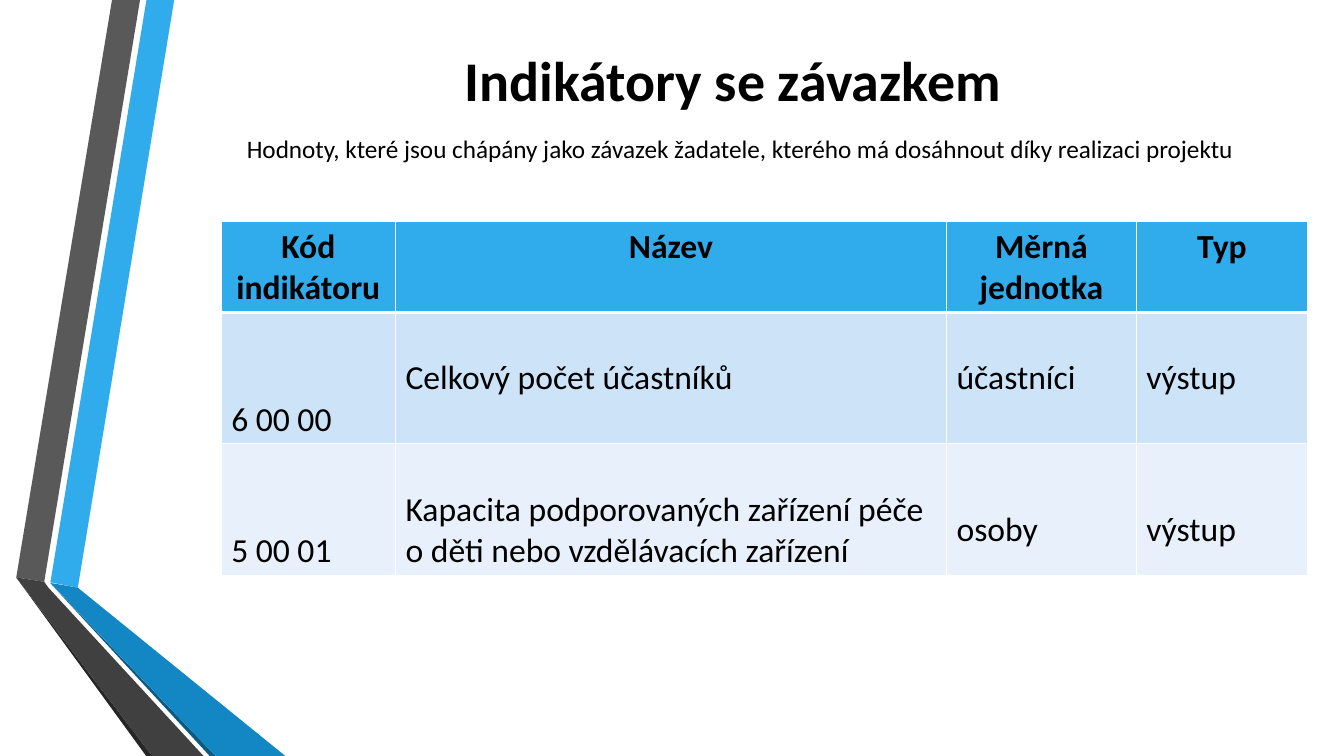
from dataclasses import dataclass

import lxml.etree
import pptx
import pptx.dml.color
import pptx.enum.text
import pptx.oxml.ns
import pptx.util

Pt = pptx.util.Pt
Align = pptx.enum.text.PP_ALIGN
Anchor = pptx.enum.text.MSO_ANCHOR

FONT = "Calibri"
BLACK, WHITE, SKY = "000000", "FFFFFF", "30ACEC"


@dataclass
class Band:
    """One polygon of the folded ribbon; points are in pt."""
    color: str
    points: list[tuple[float, float]]


@dataclass
class Row:
    height: float
    color: str
    texts: list[str]
    top_margins: tuple[float, ...] = (3.6, 3.6, 3.6, 3.6)
    header: bool = False


BANDS = [
    Band(SKY, [(36, 416), (55.6, 419.8), (124.4, 0), (104.6, 0)]),
    Band("595959", [(100, 0), (80, 0), (11.6, 412.5), (31.6, 415.6)]),
    Band("262626", [(11.6, 412.5), (104.4, 540), (108.7, 540)]),
    Band("0C5A82", [(36, 416.6), (149.8, 540), (154, 540)]),
    Band("1287C3", [(36, 416.4), (154, 540), (203.8, 540), (55.6, 419.8)]),
    Band("404040", [(145.4, 540), (34.6, 419.8), (31.6, 415.6),
                    (11.6, 412.5), (108.7, 540)]),
]

COLUMN_WIDTHS = [124.5, 393.6, 135.6, 122.4]
ROWS = [
    Row(64, SKY, ["Kód indikátoru", "Název", "Měrná jednotka", "Typ"], header=True),
    Row(93.5, "CDE3F8", ["6 00 00", "Celkový počet účastníků", "účastníci", "výstup"]),
    Row(93.5, "E8F1FB",
        ["5 00 01",
         "Kapacita podporovaných zařízení péče o děti nebo vzdělávacích zařízení",
         "osoby", "výstup"],
        top_margins=(3.6, 32.9, 32.9, 32.9)),
]


def rgb(color: str) -> pptx.dml.color.RGBColor:
    return pptx.dml.color.RGBColor.from_string(color)


def write(frame, text: str, *, size: float, bold: bool = False, color: str = BLACK,
          align=Align.LEFT, line_spacing: float = 1) -> None:
    paragraph = frame.paragraphs[0]
    paragraph.alignment = align
    paragraph.line_spacing = line_spacing
    run = paragraph.add_run()
    run.text = text
    run.font.name = FONT
    run.font.size = Pt(size)
    run.font.bold = bold
    run.font.color.rgb = rgb(color)


def add_text(slide, left: float, top: float, width: float, height: float,
             text: str, **text_format) -> None:
    frame = slide.shapes.add_textbox(Pt(left), Pt(top), Pt(width), Pt(height)).text_frame
    frame.word_wrap = True
    write(frame, text, **text_format)


def add_band(slide, band: Band) -> None:
    start, *others = [(Pt(x), Pt(y)) for x, y in band.points]
    builder = slide.shapes.build_freeform(*start)
    builder.add_line_segments(others, close=True)
    shape = builder.convert_to_shape()
    shape.shadow.inherit = False
    shape.fill.solid()
    shape.fill.fore_color.rgb = rgb(band.color)
    shape.line.fill.background()


def set_borders(cell, widths: dict[str, float]) -> None:
    qn = pptx.oxml.ns.qn
    properties = cell._tc.get_or_add_tcPr()
    for side, width in widths.items():
        line = lxml.etree.SubElement(properties, qn(f"a:ln{side}"), w=str(Pt(width)))
        fill = lxml.etree.SubElement(line, qn("a:solidFill"))
        lxml.etree.SubElement(fill, qn("a:srgbClr"), val=WHITE)


def add_indicator_table(slide, left: float, top: float) -> None:
    table = slide.shapes.add_table(
        len(ROWS), len(COLUMN_WIDTHS), Pt(left), Pt(top),
        Pt(sum(COLUMN_WIDTHS)), Pt(sum(row.height for row in ROWS))).table
    for column, width in zip(table.columns, COLUMN_WIDTHS):
        column.width = Pt(width)
    for row_index, row in enumerate(ROWS):
        table.rows[row_index].height = Pt(row.height)
        for column_index, text in enumerate(row.texts):
            cell = table.cell(row_index, column_index)
            # The header is set off by a thicker rule
            top_width = 3 if row_index == 1 else 1
            bottom_width = 3 if row.header else 1
            set_borders(cell, {"L": 1, "R": 1, "T": top_width, "B": bottom_width})
            cell.fill.solid()
            cell.fill.fore_color.rgb = rgb(row.color)
            cell.margin_top = Pt(row.top_margins[column_index])
            cell.vertical_anchor = Anchor.TOP if row.header else Anchor.MIDDLE
            is_code = column_index == 0 and not row.header
            write(cell.text_frame, text, size=24, bold=row.header,
                  align=Align.CENTER if row.header else Align.LEFT,
                  line_spacing=3 if is_code else 1)


def main() -> None:
    presentation = pptx.Presentation()
    presentation.slide_width, presentation.slide_height = Pt(960), Pt(540)
    slide = presentation.slides.add_slide(presentation.slide_layouts[6])

    # Folded ribbon on the left
    for band in BANDS:
        add_band(slide, band)

    # Heading and explanation
    add_text(slide, 235, 28.8, 577, 55.4, "Indikátory se závazkem",
             size=40, bold=True, align=Align.CENTER)
    add_text(slide, 169.2, 91.4, 747.4, 29,
             "Hodnoty, které jsou chápány jako závazek žadatele, "
             "kterého má dosáhnout díky realizaci projektu", size=18)

    # Indicators
    add_indicator_table(slide, 158, 158.4)

    presentation.save("out.pptx")


if __name__ == "__main__":
    main()
